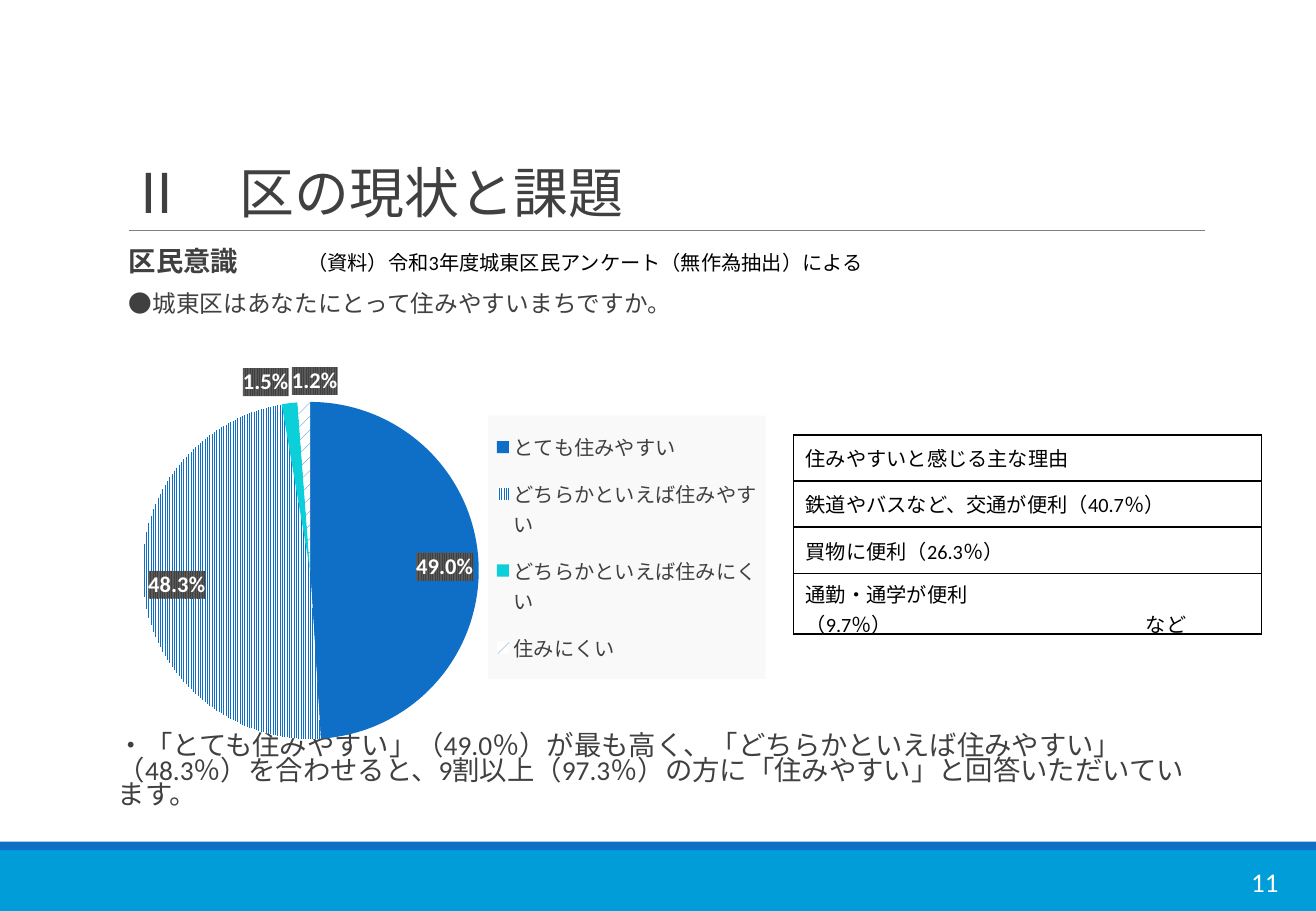
"""Build the slide on how residents rate living in the ward."""
from dataclasses import dataclass

from lxml import etree
from pptx import Presentation
from pptx.chart.data import CategoryChartData
from pptx.dml.color import RGBColor
from pptx.enum.chart import XL_CHART_TYPE, XL_LABEL_POSITION, XL_LEGEND_POSITION
from pptx.enum.dml import MSO_PATTERN
from pptx.enum.shapes import MSO_CONNECTOR, MSO_SHAPE
from pptx.enum.text import MSO_ANCHOR, PP_ALIGN
from pptx.oxml import parse_xml
from pptx.oxml.ns import nsdecls, qn
from pptx.util import Inches, Pt

PIE = XL_CHART_TYPE.PIE
BEST_FIT = XL_LABEL_POSITION.BEST_FIT
LEGEND_RIGHT = XL_LEGEND_POSITION.RIGHT
STRIPES = MSO_PATTERN.NARROW_VERTICAL
DOTS = MSO_PATTERN.PERCENT_10
STRAIGHT = MSO_CONNECTOR.STRAIGHT
RECTANGLE = MSO_SHAPE.RECTANGLE
TOP, MIDDLE, BOTTOM = MSO_ANCHOR.TOP, MSO_ANCHOR.MIDDLE, MSO_ANCHOR.BOTTOM
LEFT, RIGHT = PP_ALIGN.LEFT, PP_ALIGN.RIGHT


@dataclass(frozen=True)
class Theme:
    """Colours, fonts and type sizes."""
    blue: str = "0F6FC6"
    sky: str = "009DD9"
    aqua: str = "0BD0D9"
    ink: str = "404040"
    black: str = "000000"
    white: str = "FFFFFF"
    rule: str = "808080"
    legend: str = "F9F9F9"
    stripe: str = "595959"
    latin: str = "Calibri"
    asian: str = "Noto Sans CJK JP"
    title: float = 32.5
    body: float = 16.2
    question: float = 14
    number: float = 16
    label: float = 13.3
    small: float = 12


THEME = Theme()

PAGE_WIDTH, PAGE_HEIGHT = 10.83, 7.5
BANDS = [((0, 7, PAGE_WIDTH, 0.5), THEME.sky),
         ((0, 6.93, PAGE_WIDTH, 0.07), THEME.blue)]
RULE = (1.06, 1.9, 9.92, 1.9)

BODY_SPACING = {"line_spacing": 0.75, "space_before": Pt(9.8), "space_after": Pt(1.6)}
BOXES = [
    {"at": (0.97, 0.31, 8.94, 1.59), "anchor": BOTTOM, "side": 0.1,
     "spacing": {"line_spacing": 0.85},
     "lines": [("Ⅱ　区の現状と課題", THEME.title, THEME.ink, False)]},
    {"at": (1.06, 2.02, 8.85, 0.75), "side": 0, "spacing": BODY_SPACING,
     "lines": [("区民意識", THEME.body, THEME.ink, True),
               ("●城東区はあなたにとって住みやすいまちですか。",
                THEME.question, THEME.ink, False)]},
    {"at": (0.97, 6.01, 8.94, 0.85), "side": 0, "spacing": BODY_SPACING,
     "lines": [("・「とても住みやすい」（49.0％）が最も高く、「どちらかといえば住みやすい」"
                "（48.3％）を合わせると、9割以上（97.3％）の方に「住みやすい」と"
                "回答いただいています。", THEME.body, THEME.ink, False)]},
    {"at": (2.43, 2.01, 7.02, 0.3), "side": 0.1, "spacing": {},
     "lines": [("（資料）令和3年度城東区民アンケート（無作為抽出）による",
                THEME.small, THEME.black, False)]},
    {"at": (9.45, 7.06, 1.17, 0.4), "anchor": MIDDLE, "side": 0.1,
     "spacing": {"alignment": RIGHT},
     "lines": [("11", THEME.number, THEME.white, False)]},
]

CHART_AT = (0.75, 2.88, 5.93, 3.35)
ANSWERS = [("とても住みやすい", 49.0, THEME.blue, None),
           ("どちらかといえば住みやすい", 48.3, THEME.blue, STRIPES),
           ("どちらかといえば住みにくい", 1.5, THEME.aqua, None),
           ("住みにくい", 1.2, THEME.blue, DOTS)]
PLOT_AREA = (0.07, 0.126, 0.468, 0.833)
LEGEND_AREA = (0.551, 0.162, 0.385, 0.647)

TABLE_AT = (6.53, 3.58, 3.85, 1.52)
REASONS = ["住みやすいと感じる主な理由", "鉄道やバスなど、交通が便利（40.7％）",
           "買物に便利（26.3％）", "通勤・通学が便利\v（9.7％）\tなど"]
TAB_STOP = 2.8


def colour(code):
    return RGBColor.from_string(code)


def inches(lengths):
    return [Inches(length) for length in lengths]


def assign(target, values):
    for name, value in values.items():
        setattr(target, name, value)


def style_font(font, size, code, bold=False):
    assign(font, {"name": THEME.latin, "size": Pt(size), "bold": bold})
    font.color.rgb = colour(code)


def write(para, text, size, code, bold=False):
    para.text = text
    for span in para.runs:
        style_font(span.font, size, code, bold)
        properties = span.font._element
        properties.set("lang", "ja-JP")
        asian = etree.SubElement(properties, qn("a:ea"))
        asian.set("typeface", THEME.asian)


def add_text(page, at, lines, side, spacing, anchor=TOP):
    frame = page.shapes.add_textbox(*inches(at)).text_frame
    assign(frame, {"word_wrap": True, "vertical_anchor": anchor,
                   "margin_left": Inches(side), "margin_right": Inches(side)})
    for index, line in enumerate(lines):
        para = frame.add_paragraph() if index else frame.paragraphs[0]
        assign(para, {"alignment": LEFT, **spacing})
        write(para, *line)


def add_frame(page):
    for at, code in BANDS:
        band = page.shapes.add_shape(RECTANGLE, *inches(at))
        band.shadow.inherit = False
        band.fill.solid()
        band.fill.fore_color.rgb = colour(code)
        band.line.fill.background()
    rule = page.shapes.add_connector(STRAIGHT, *inches(RULE))
    rule.line.color.rgb = colour(THEME.rule)
    rule.line.width = Pt(0.5)
    etree.SubElement(rule._element.spPr, qn("a:effectLst"))


def layout_xml(area, inner=False):
    target = '<c:layoutTarget val="inner"/>' if inner else ""
    modes = "".join(f'<c:{side}Mode val="edge"/>' for side in "xy")
    sizes = "".join(f'<c:{side} val="{value}"/>' for side, value in zip("xywh", area))
    return parse_xml(f'<c:layout {nsdecls("c")}><c:manualLayout>{target}{modes}{sizes}'
                     '</c:manualLayout></c:layout>')


def add_pie(page):
    data = CategoryChartData()
    data.categories = [answer[0] for answer in ANSWERS]
    data.add_series("Series 1", [answer[1] for answer in ANSWERS])
    chart = page.shapes.add_chart(PIE, *inches(CHART_AT), data).chart
    assign(chart, {"has_title": False, "has_legend": True})
    style_font(chart.font, 10, THEME.black)
    plot = chart.plots[0]
    plot.vary_by_categories = True
    for index, (_, _, code, pattern) in enumerate(ANSWERS):
        fill = plot.series[0].points[index].format.fill
        if pattern is None:
            fill.solid()
        else:
            fill.patterned()
            fill.pattern = pattern
            fill.back_color.rgb = colour(THEME.white)
        fill.fore_color.rgb = colour(code)
    plot.has_data_labels = True
    labels = plot.data_labels
    assign(labels, {"show_percentage": True, "show_value": False, "position": BEST_FIT,
                    "number_format": "0.0%", "number_format_is_linked": False})
    style_font(labels.font, THEME.label, THEME.white, True)
    labels._element.find(qn("c:txPr")).addprevious(parse_xml(
        f'<c:spPr {nsdecls("c", "a")}><a:pattFill prst="narVert">'
        f'<a:fgClr><a:srgbClr val="{THEME.ink}"/></a:fgClr>'
        f'<a:bgClr><a:srgbClr val="{THEME.stripe}"/></a:bgClr></a:pattFill></c:spPr>'))
    legend = chart.legend
    assign(legend, {"position": LEGEND_RIGHT, "include_in_layout": False})
    style_font(legend.font, THEME.small, THEME.ink)
    legend._element.find(qn("c:txPr")).addprevious(parse_xml(
        f'<c:spPr {nsdecls("c", "a")}><a:solidFill><a:srgbClr val="{THEME.legend}"/>'
        '</a:solidFill></c:spPr>'))
    plot_area = chart._chartSpace.chart.plotArea
    for owner in (plot_area, legend._element):
        for old in owner.findall(qn("c:layout")):
            owner.remove(old)
    plot_area.insert(0, layout_xml(PLOT_AREA, True))
    legend._element.find(qn("c:legendPos")).addnext(layout_xml(LEGEND_AREA))


def add_reasons(page):
    table = page.shapes.add_table(len(REASONS), 1, *inches(TABLE_AT)).table
    assign(table, {"first_row": False, "horz_banding": False})
    for index, reason in enumerate(REASONS):
        cell = table.cell(index, 0)
        cell.vertical_anchor = MIDDLE
        para = cell.text_frame.paragraphs[0]
        write(para, reason, THEME.small, THEME.black)
        if "\t" in reason:
            para._p.get_or_add_pPr().append(parse_xml(
                f'<a:tabLst {nsdecls("a")}><a:tab pos="{Inches(TAB_STOP)}" algn="l"/></a:tabLst>'))
        cell.fill.background()
        for position, side in enumerate("LRTB"):
            cell._tc.tcPr.insert(position, parse_xml(
                f'<a:ln{side} {nsdecls("a")} w="{Pt(1)}"><a:solidFill>'
                f'<a:srgbClr val="{THEME.black}"/></a:solidFill></a:ln{side}>'))


def main():
    deck = Presentation()
    deck.slide_width, deck.slide_height = inches((PAGE_WIDTH, PAGE_HEIGHT))
    page = deck.slides.add_slide(deck.slide_layouts[6])
    add_frame(page)
    for box in BOXES:
        add_text(page, **box)
    add_pie(page)
    add_reasons(page)
    deck.save("out.pptx")


if __name__ == "__main__":
    main()
